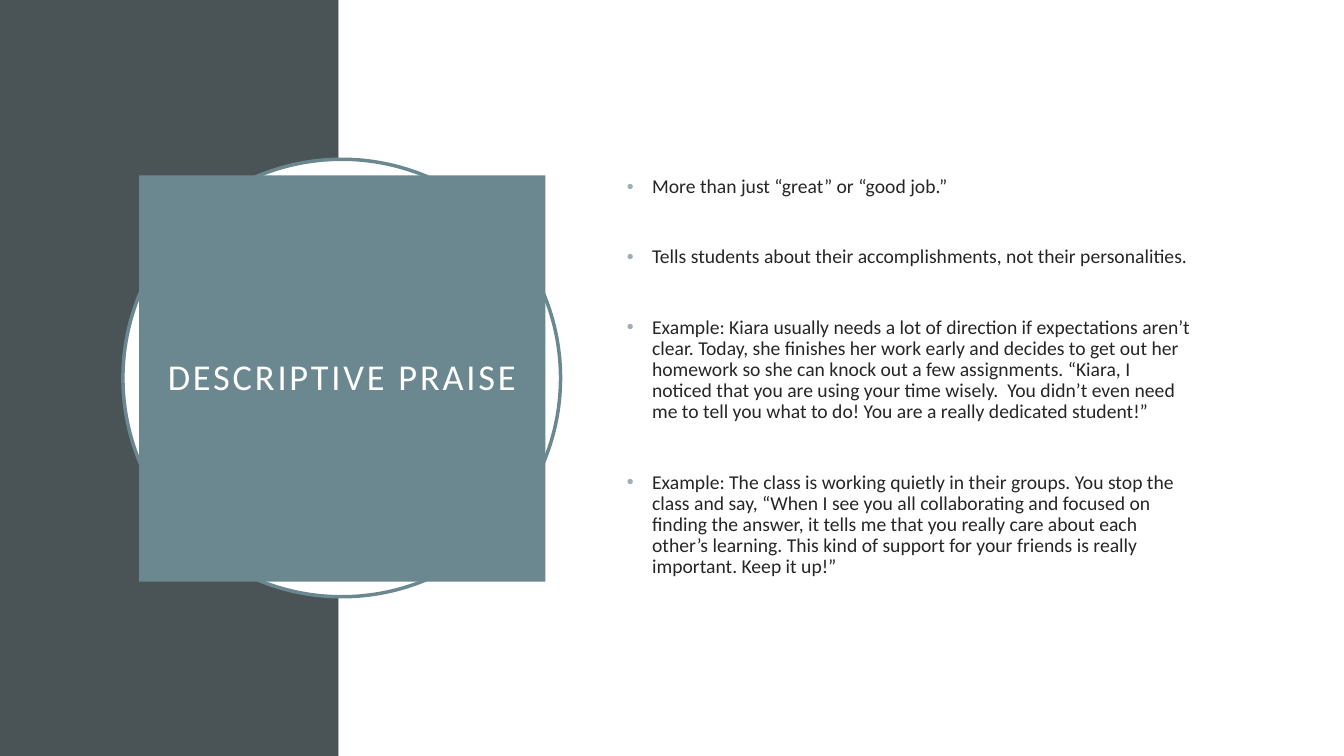
"""Build the descriptive praise slide."""
from dataclasses import dataclass
from typing import Any, Optional

from lxml.etree import SubElement
from pptx import Presentation
from pptx.dml.color import RGBColor
from pptx.enum.shapes import MSO_SHAPE
from pptx.enum.text import MSO_ANCHOR, MSO_AUTO_SIZE, PP_ALIGN
from pptx.oxml.ns import qn
from pptx.util import Emu, Inches, Pt

WIDE, HIGH = Inches(13.33), Inches(7.5)
HUES = {"slate": "4A5356", "white": "FFFFFF", "teal": "6B8891",
        "dot": "9BAFB5", "ink": "262626"}
FRAME = {"word_wrap": True, "auto_size": MSO_AUTO_SIZE.NONE,
         "vertical_anchor": MSO_ANCHOR.MIDDLE}
PAD = dict.fromkeys(("margin_left", "margin_right", "margin_top", "margin_bottom"),
                    Inches(0.2))
POINTS = (
    "More than just “great” or “good job.”",
    "Tells students about their accomplishments, not their personalities.",
    "Example: Kiara usually needs a lot of direction if expectations aren’t clear. "
    "Today, she finishes her work early and decides to get out her homework so she "
    "can knock out a few assignments. “Kiara, I noticed that you are using your time "
    "wisely.  You didn’t even need me to tell you what to do! You are a really "
    "dedicated student!”",
    "Example: The class is working quietly in their groups. You stop the class and "
    "say, “When I see you all collaborating and focused on finding the answer, it "
    "tells me that you really care about each other’s learning. This kind of support "
    "for your friends is really important. Keep it up!”",
)


@dataclass(frozen=True)
class Box:
    """Hold a place in percent of the slide's width and height."""
    left: float
    top: float
    width: float
    height: float

    def spans(self) -> dict[str, Emu]:
        """Give the place in slide units."""
        return {"left": Emu(round(WIDE * self.left / 100)),
                "top": Emu(round(HIGH * self.top / 100)),
                "width": Emu(round(WIDE * self.width / 100)),
                "height": Emu(round(HIGH * self.height / 100))}


@dataclass(frozen=True)
class Panel:
    """Describe a filled shape."""
    kind: MSO_SHAPE
    box: Box
    fill: str
    line: Optional[str] = None


PANELS = (
    Panel(MSO_SHAPE.RECTANGLE, Box(0, 0, 25.2, 100), "slate"),
    Panel(MSO_SHAPE.RECTANGLE, Box(25.2, 0, 74.8, 100), "white"),
    Panel(MSO_SHAPE.OVAL, Box(9.15, 21.07, 32.56, 57.87), "white", "teal"),
)
TITLE = Box(10.35, 23.2, 30.23, 53.73)
BODY = Box(45.91, 20.4, 43.66, 59.07)


def apply(part: Any, values: dict[str, Any]) -> None:
    """Set each named value on a part."""
    for name, value in values.items():
        setattr(part, name, value)


def paint(fill: Any, hue: str) -> None:
    """Give a fill one solid colour."""
    fill.solid()
    fill.fore_color.rgb = RGBColor.from_string(HUES[hue])


def write(para: Any, text: str, size: int, hue: str) -> Any:
    """Add a styled run to a paragraph."""
    run = para.add_run()
    run.text = text
    apply(run.font, {"name": "Calibri", "size": Pt(size)})
    run.font.color.rgb = RGBColor.from_string(HUES[hue])
    para.line_spacing = 0.9
    return run


def draw(slide: Any, panel: Panel) -> None:
    """Draw one panel."""
    shape = slide.shapes.add_shape(panel.kind, **panel.box.spans())
    shape.shadow.inherit = False
    paint(shape.fill, panel.fill)
    if panel.line:
        paint(shape.line.fill, panel.line)
        shape.line.width = Pt(2.5)
    else:
        shape.line.fill.background()


def head(slide: Any) -> None:
    """Place and style the title above the panels."""
    title = slide.shapes.title
    title.element.getparent().append(title.element)
    apply(title, TITLE.spans())
    paint(title.fill, "teal")
    apply(title.text_frame, FRAME | PAD)
    para = title.text_frame.paragraphs[0]
    para.alignment = PP_ALIGN.CENTER
    run = write(para, "DESCRIPTIVE PRAISE", 26, "white")
    run.font._element.set("spc", "200")


def mark(para: Any) -> None:
    """Add a coloured bullet with a hanging indent."""
    props = para._p.get_or_add_pPr()
    props.set("marL", str(Inches(0.25)))
    props.set("indent", str(-Inches(0.25)))
    tint = SubElement(props, qn("a:buClr"))
    SubElement(tint, qn("a:srgbClr"), val=HUES["dot"])
    SubElement(props, qn("a:buFont"), typeface="Arial")
    SubElement(props, qn("a:buChar"), char="•")


def list_points(slide: Any) -> None:
    """Write the bullet list."""
    frame = slide.shapes.add_textbox(**BODY.spans()).text_frame
    apply(frame, FRAME)
    for rank, text in enumerate(POINTS):
        para = frame.add_paragraph() if rank else frame.paragraphs[0]
        write(para, text, 14, "ink")
        para.space_before = Pt(35 if rank else 0)
        mark(para)


def main() -> None:
    """Build and save the deck."""
    deck = Presentation()
    apply(deck, {"slide_width": WIDE, "slide_height": HIGH})
    slide = deck.slides.add_slide(deck.slide_layouts[5])
    paint(slide.background.fill, "white")
    for panel in PANELS:
        draw(slide, panel)
    head(slide)
    list_points(slide)
    deck.save("out.pptx")


if __name__ == "__main__":
    main()
